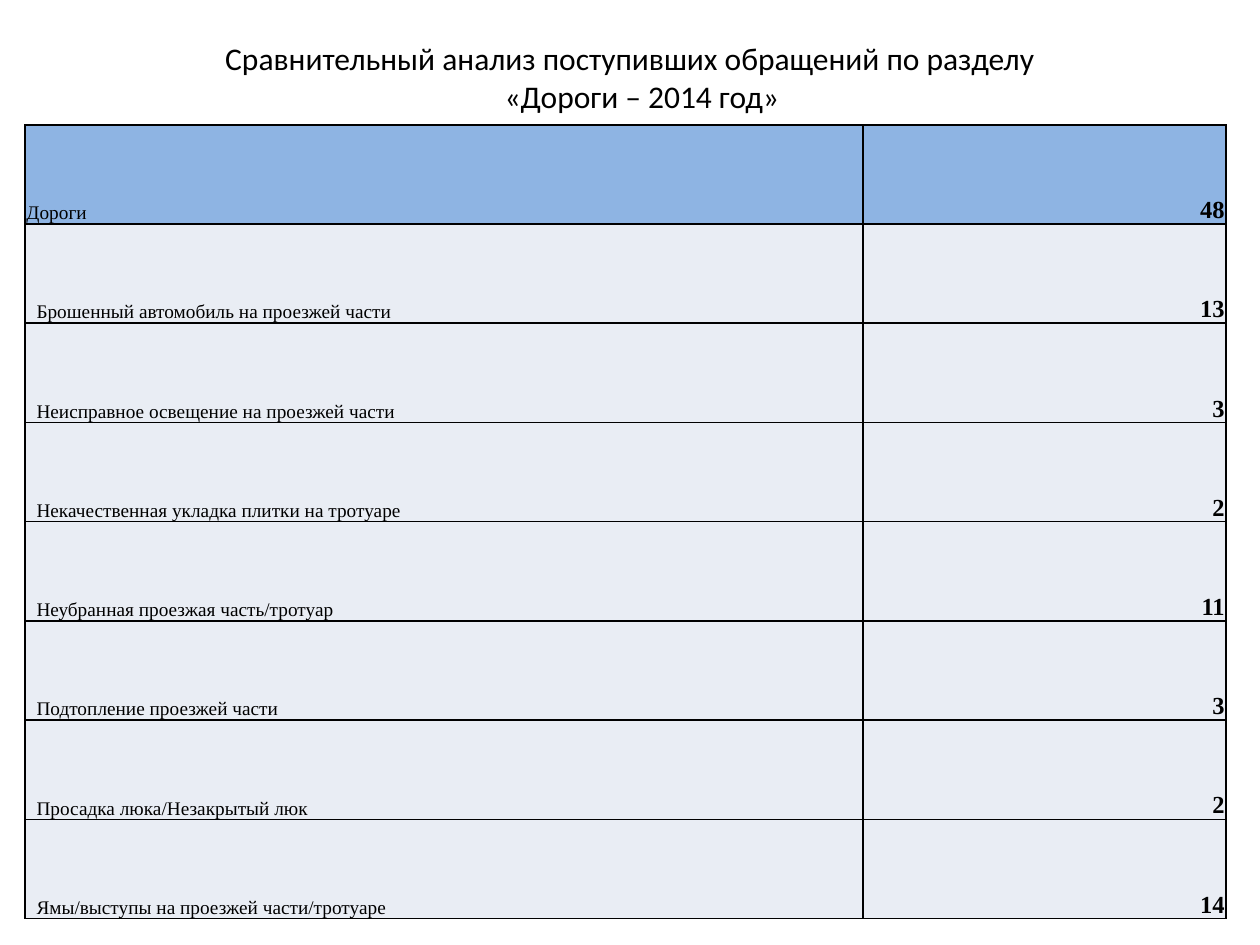
from dataclasses import dataclass

from lxml.etree import SubElement
from pptx import Presentation
from pptx.dml.color import RGBColor
from pptx.enum.text import MSO_ANCHOR, PP_ALIGN
from pptx.oxml.ns import qn
from pptx.util import Inches, Pt


@dataclass(frozen=True)
class Theme:
    ink: str = "000000"
    total_fill: str = "8EB4E3"
    item_fill: str = "E9EDF4"
    title_font: str = "Calibri"
    table_font: str = "Times New Roman"
    title_size: int = 18
    label_size: int = 11
    count_size: int = 14
    border_width: int = 1


@dataclass(frozen=True)
class Topic:
    label: str
    count: int
    is_total: bool = False


THEME = Theme()
TITLE_LINES = (
    ("Сравнительный анализ поступивших обращений по разделу", 0),
    ("«Дороги – 2014 год»", 0.19),
)
TOPICS = (
    Topic("Дороги", 48, is_total=True),
    Topic("Брошенный автомобиль на проезжей части", 13),
    Topic("Неисправное освещение на проезжей части", 3),
    Topic("Некачественная укладка плитки на тротуаре", 2),
    Topic("Неубранная проезжая часть/тротуар", 11),
    Topic("Подтопление проезжей части", 3),
    Topic("Просадка люка/Незакрытый люк", 2),
    Topic("Ямы/выступы на проезжей части/тротуаре", 14),
)
COLUMN_WIDTHS = (6.65, 2.88)
TABLE_HEIGHT = 6.3


def write(para, text: str, *, font: str, size: int, bold: bool = False,
          align: PP_ALIGN = PP_ALIGN.LEFT) -> None:
    para.alignment = align
    span = para.add_run()
    span.text = text
    span.font.name = font
    span.font.size = Pt(size)
    span.font.bold = bold
    span.font.color.rgb = RGBColor.from_string(THEME.ink)


def add_title(slide) -> None:
    box = slide.shapes.add_textbox(Inches(0.5), Inches(0.3), Inches(9), Inches(1.25))
    frame = box.text_frame
    frame.word_wrap = True
    frame.vertical_anchor = MSO_ANCHOR.TOP
    frame.margin_top = Inches(0.01)
    for index, (line, indent) in enumerate(TITLE_LINES):
        para = frame.add_paragraph() if index else frame.paragraphs[0]
        para._p.get_or_add_pPr().set("marL", str(Inches(indent)))
        write(para, line, font=THEME.title_font, size=THEME.title_size,
              align=PP_ALIGN.CENTER)


def add_borders(cell) -> None:
    """Insert the edges ahead of the fill, as the cell schema requires."""
    properties = cell._tc.get_or_add_tcPr()
    for position, edge in enumerate(("lnL", "lnR", "lnT", "lnB")):
        line = SubElement(properties, qn(f"a:{edge}"), w=str(Pt(THEME.border_width)))
        fill = SubElement(line, qn("a:solidFill"))
        SubElement(fill, qn("a:srgbClr"), val=THEME.ink)
        properties.insert(position, line)


def format_cell(cell, fill: str, left_margin: float) -> None:
    cell.fill.solid()
    cell.fill.fore_color.rgb = RGBColor.from_string(fill)
    cell.vertical_anchor = MSO_ANCHOR.BOTTOM
    cell.margin_left = Inches(left_margin)
    cell.margin_right = cell.margin_top = Inches(0.01)
    cell.margin_bottom = Inches(0)
    add_borders(cell)


def add_topic_table(slide) -> None:
    table = slide.shapes.add_table(
        len(TOPICS), len(COLUMN_WIDTHS), Inches(0.2), Inches(0.99),
        Inches(sum(COLUMN_WIDTHS)), Inches(TABLE_HEIGHT)).table
    for column, width in zip(table.columns, COLUMN_WIDTHS):
        column.width = Inches(width)
    for row, topic in zip(table.rows, TOPICS):
        row.height = Inches(TABLE_HEIGHT / len(TOPICS))
        fill = THEME.total_fill if topic.is_total else THEME.item_fill
        label, count = row.cells
        format_cell(label, fill, 0.01 if topic.is_total else 0.09)
        format_cell(count, fill, 0.01)
        write(label.text_frame.paragraphs[0], topic.label,
              font=THEME.table_font, size=THEME.label_size)
        write(count.text_frame.paragraphs[0], str(topic.count),
              font=THEME.table_font, size=THEME.count_size, bold=True,
              align=PP_ALIGN.RIGHT)


def main() -> None:
    deck = Presentation()
    deck.slide_width, deck.slide_height = Inches(10), Inches(7.5)
    slide = deck.slides.add_slide(deck.slide_layouts[6])
    add_title(slide)
    add_topic_table(slide)
    deck.save("out.pptx")


if __name__ == "__main__":
    main()
